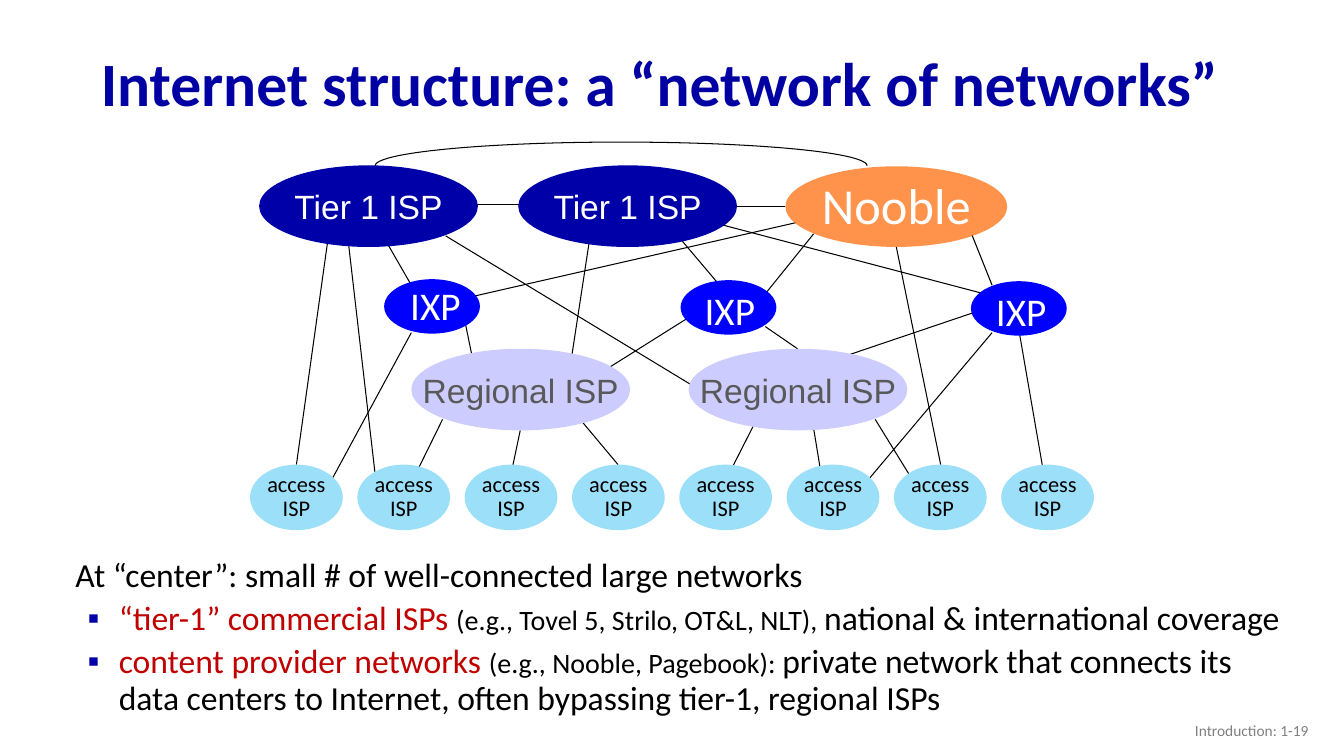
from lxml import etree
from pptx import Presentation
from pptx.dml.color import RGBColor
from pptx.enum.shapes import MSO_CONNECTOR, MSO_SHAPE
from pptx.enum.text import MSO_ANCHOR, MSO_AUTO_SIZE, PP_ALIGN
from pptx.oxml.ns import qn
from pptx.util import Inches, Pt

STRAIGHT = MSO_CONNECTOR.STRAIGHT
ELLIPSE, ARC = MSO_SHAPE.OVAL, MSO_SHAPE.ARC
MIDDLE, TOP = MSO_ANCHOR.MIDDLE, MSO_ANCHOR.TOP
LEFT, CENTER, RIGHT = PP_ALIGN.LEFT, PP_ALIGN.CENTER, PP_ALIGN.RIGHT
GROW, FIXED = MSO_AUTO_SIZE.SHAPE_TO_FIT_TEXT, MSO_AUTO_SIZE.NONE

BLACK, WHITE, NAVY, RED = "000000", "FFFFFF", "0000A8", "C00000"

# Links as (from x, from y, to x, to y)
ACCESS_LINKS = [
    (3.28, 2.18, 2.94, 4.61), (5.16, 4.27, 5.05, 4.79), (4.39, 4.16, 4.08, 4.79),
    (3.45, 2.36, 3.74, 4.87), (4.08, 3.3, 3.23, 4.87), (5.67, 4.06, 6.13, 4.61),
    (7.5, 4.17, 7.18, 4.8), (8.07, 4.25, 8.16, 4.8), (8.68, 4.16, 9.13, 4.89),
    (8.89, 2.45, 9.33, 4.61), (10.11, 3.3, 10.37, 4.8), (9.84, 3.3, 8.51, 4.88),
]
REGIONAL_LINKS = [
    (4.62, 3.23, 4.7, 3.62), (5.85, 2.36, 5.67, 3.54), (6.83, 3.15, 5.94, 3.71),
    (4.42, 2.34, 6.91, 3.85), (9.75, 3.07, 8.33, 3.55), (7.59, 3.24, 7.91, 3.46),
]
CORE_LINKS = [
    (7.89, 2.21, 4.43, 3), (9.64, 2.33, 9.84, 2.83), (8.07, 2.32, 7.53, 2.99),
    (5.28, 2.03, 4.7, 2.03), (7.79, 2.05, 7.31, 2.05), (3.81, 2.36, 4.08, 2.83),
    (6.74, 2.36, 7.18, 2.88), (7.12, 2.22, 9.78, 2.92),
]
# Exchange points as (ellipse x, ellipse y, label x, label y)
IXPS = [(3.81, 2.77, 3.97, 2.74), (6.75, 2.78, 6.89, 2.79), (9.63, 2.79, 9.78, 2.8)]

BULLETS = [
    [("“tier-1” commercial ISPs ", 24, RED),
     ("(e.g., Tovel 5, Strilo, OT&L, NLT), ", 20, BLACK),
     ("national & international coverage", 24, BLACK)],
    [("content provider networks ", 24, RED),
     ("(e.g., Nooble, Pagebook): ", 20, BLACK),
     ("private network that connects its data centers to Internet, "
      "often bypassing tier-1, regional ISPs", 24, BLACK)],
]


def rgb(color):
    return RGBColor.from_string(color)


def add_run(p, text, size, color, font="Calibri", bold=False):
    r = p.add_run()
    r.text = text
    r.font.size, r.font.name, r.font.bold = Pt(size), font, bold
    r.font.color.rgb = rgb(color)


def fill_paragraphs(tf, lines, size, color, font="Calibri", align=LEFT, spacing=None):
    for i, line in enumerate(lines):
        p = tf.add_paragraph() if i else tf.paragraphs[0]
        p.alignment, p.line_spacing = align, spacing
        add_run(p, line, size, color, font)


def add_link(s, x1, y1, x2, y2):
    line = s.shapes.add_connector(STRAIGHT, Inches(x1), Inches(y1), Inches(x2), Inches(y2))
    line.line.color.rgb = rgb(BLACK)
    line.line.width = Pt(0.75)
    etree.SubElement(line._element.spPr, qn("a:effectLst"))


def add_ellipse(s, x, y, w, h, color, opacity=100):
    sp = s.shapes.add_shape(ELLIPSE, Inches(x), Inches(y), Inches(w), Inches(h))
    sp.shadow.inherit = False
    sp.fill.solid()
    sp.fill.fore_color.rgb = rgb(color)
    sp.line.fill.background()
    if opacity < 100:
        clr = sp._element.spPr.find(".//" + qn("a:srgbClr"))
        etree.SubElement(clr, qn("a:alpha"), val=str(opacity * 1000))
    return sp


def add_isp(s, x, y, w, h, color, lines, size, text_color, font, spacing=None):
    tf = add_ellipse(s, x, y, w, h, color).text_frame
    tf.word_wrap, tf.vertical_anchor = False, MIDDLE
    fill_paragraphs(tf, lines, size, text_color, font, CENTER, spacing)


def add_text_box(s, x, y, w, h, wrap=True, anchor=TOP):
    tf = s.shapes.add_textbox(Inches(x), Inches(y), Inches(w), Inches(h)).text_frame
    tf.word_wrap, tf.vertical_anchor = wrap, anchor
    tf.auto_size = FIXED if wrap else GROW
    return tf


def add_peering_arc(s):
    arc = s.shapes.add_shape(ARC, Inches(3.72), Inches(1.41), Inches(4.88), Inches(0.47))
    arc.shadow.inherit = False
    arc.adjustments[0], arc.adjustments[1] = 106.82, 0
    arc.fill.background()
    arc.line.color.rgb = rgb(BLACK)
    arc.line.width = Pt(0.75)


def set_indent(p, left, hanging=0):
    pPr = p._p.get_or_add_pPr()
    pPr.set("marL", str(Inches(left)))
    pPr.set("indent", str(-Inches(hanging)))
    return pPr


def add_square_bullet(p):
    pPr = set_indent(p, 0.5, 0.31)
    color = etree.SubElement(pPr, qn("a:buClr"))
    etree.SubElement(color, qn("a:srgbClr"), val=NAVY)
    etree.SubElement(pPr, qn("a:buFont"), typeface="Arial")
    etree.SubElement(pPr, qn("a:buChar"), char="▪")


def add_title(s, text):
    title = s.shapes.title
    title.left, title.top = Inches(0.9), Inches(0.37)
    title.width, title.height = Inches(11.5), Inches(0.98)
    tf = title.text_frame
    tf.vertical_anchor = MIDDLE
    p = tf.paragraphs[0]
    p.alignment, p.line_spacing = LEFT, 0.9
    add_run(p, text, 44, "0000A3", bold=True)


def add_summary(s):
    tf = add_text_box(s, 0.58, 5.49, 12.34, 2)
    p = tf.paragraphs[0]
    p.line_spacing, p.space_before = 0.9, Pt(10)
    set_indent(p, 0.07)
    add_run(p, "At “center”: small # of well-connected large networks", 24, BLACK)
    for runs in BULLETS:
        p = tf.add_paragraph()
        p.level, p.line_spacing, p.space_before = 1, 0.9, Pt(5)
        add_square_bullet(p)
        for text, size, color in runs:
            add_run(p, text, size, color)


def add_network(s):
    for link in ACCESS_LINKS + REGIONAL_LINKS + CORE_LINKS:
        add_link(s, *link)
    add_peering_arc(s)
    for i in range(8):
        add_isp(s, 2.48 + i * 7.45 / 7, 4.61, 0.92, 0.65, "9CDFF9",
                ["access", "ISP"], 16, BLACK, "Calibri", 0.9)
    for x in (4.08, 6.83):
        add_isp(s, x, 3.46, 2.17, 0.81, "CCCCFF", ["Regional ISP"], 24, "595959", "Arial")
    for x in (2.57, 5.14):
        add_isp(s, x, 1.64, 2.17, 0.81, NAVY, ["Tier 1 ISP"], 24, WHITE, "Arial")
    for x, y, label_x, label_y in IXPS:
        add_ellipse(s, x, y, 0.95, 0.54, "0000FF")
        fill_paragraphs(add_text_box(s, label_x, label_y, 0.71, 0.54, wrap=False),
                        ["IXP"], 28, WHITE)
    add_ellipse(s, 7.79, 1.65, 2.2, 0.8, "FF6600", opacity=70)
    fill_paragraphs(add_text_box(s, 7.94, 1.68, 1.9, 0.71, wrap=False),
                    ["Nooble"], 36, WHITE, align=CENTER)


def main():
    prs = Presentation()
    prs.slide_width, prs.slide_height = Inches(13.33), Inches(7.5)
    s = prs.slides.add_slide(prs.slide_layouts.get_by_name("Title Only"))
    add_title(s, "Internet structure: a “network of networks”")
    add_network(s)
    add_summary(s)
    fill_paragraphs(add_text_box(s, 10.08, 7.05, 3, 0.4, anchor=MIDDLE),
                    ["Introduction: 1-19"], 11, "808080", align=RIGHT)
    prs.save("out.pptx")


if __name__ == "__main__":
    main()
